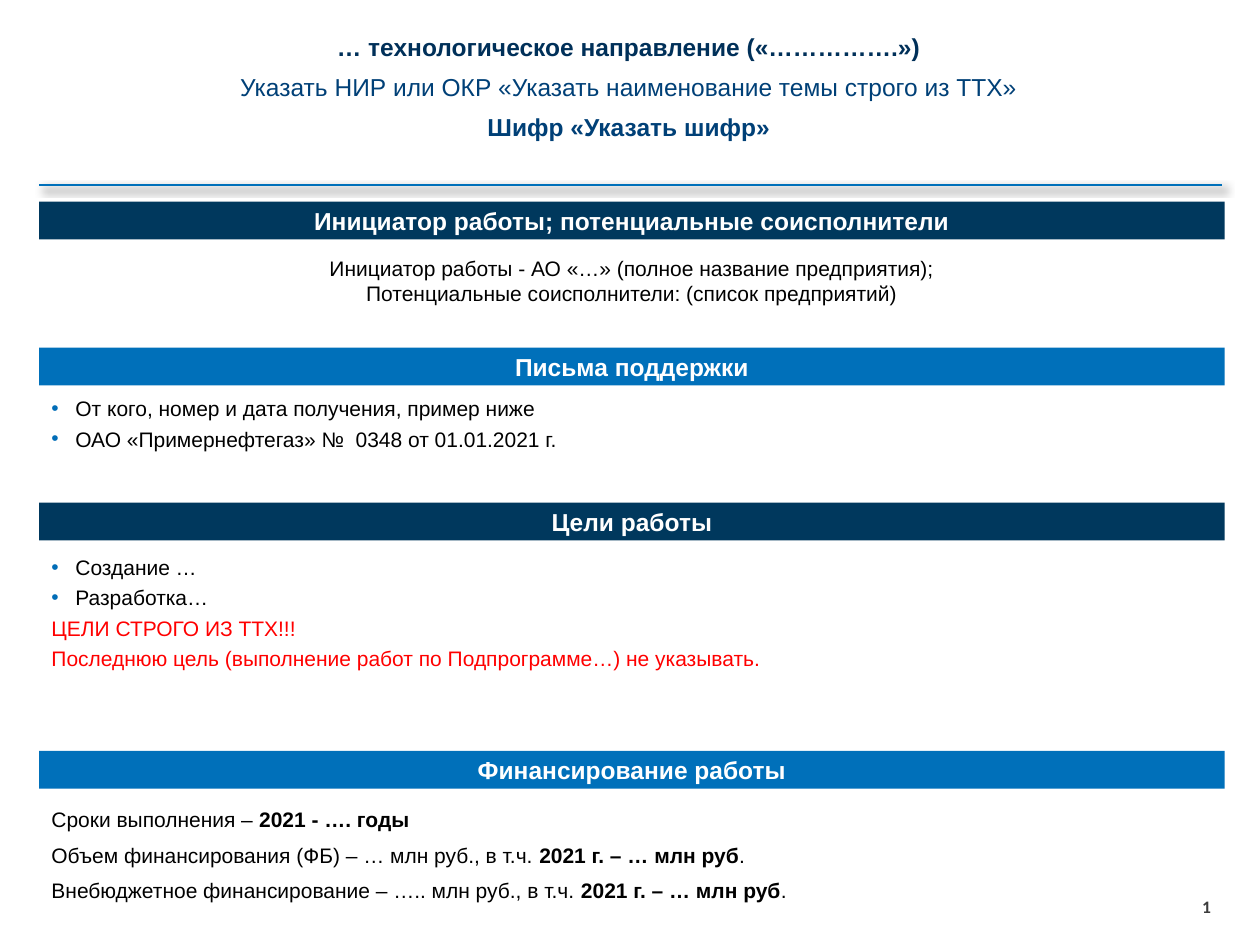
from lxml.etree import SubElement
from pptx import Presentation
from pptx.dml.color import RGBColor
from pptx.enum.shapes import MSO_CONNECTOR as Connector, MSO_SHAPE as Shape
from pptx.enum.text import MSO_ANCHOR as Anchor, MSO_AUTO_SIZE as AutoSize, PP_ALIGN as Align
from pptx.oxml.ns import qn
from pptx.util import Inches, Pt


class Theme:
    font, number_font = "Arial", "Calibri"
    navy, blue, bullet = "00385D", "0070BA", "016DB7"
    title, subtitle = "003059", "004077"
    white, black, red, grey = "FFFFFF", "000000", "FF0000", "3C3C3C"
    heading_size, body_size, number_size = 14, 12, 10


deck = Presentation()
deck.slide_width, deck.slide_height = Inches(10), Inches(7.5)
column, row = deck.slide_width / 100, deck.slide_height / 75
left, band_width, band_height = 3.1, 94.1, 3


def place(left, top, width, height):
    return [round(left * column), round(top * row), round(width * column), round(height * row)]


def write(frame, lines, size=Theme.body_size, color=Theme.black, font=Theme.font, bold=False,
          align=Align.LEFT, after=0, anchor=Anchor.TOP, inset=None):
    frame.word_wrap = True
    frame.auto_size = AutoSize.NONE
    frame.vertical_anchor = anchor
    if inset is not None:
        frame.margin_left = frame.margin_top = frame.margin_right = frame.margin_bottom = inset
    for index, line in enumerate(lines):
        para = frame.add_paragraph() if index else frame.paragraphs[0]
        para.alignment = align
        para.space_after = Pt(after)
        style = {"color": color, "bold": bold, "bullet": False} | line
        if style["bullet"]:
            props = para._p.get_or_add_pPr()
            indent = Inches(0.19)
            props.set("marL", str(indent))
            props.set("indent", str(-indent))
            SubElement(SubElement(props, qn("a:buClr")), qn("a:srgbClr"), val=Theme.bullet)
            SubElement(props, qn("a:buFont"), typeface=Theme.font)
            SubElement(props, qn("a:buChar"), char="•")
        for part, text in enumerate(line["spans"]):
            span = para.add_run()
            span.text = text
            span.font.name = font
            span.font.size = Pt(size)
            span.font.bold = style["bold"] or part % 2 == 1
            span.font.color.rgb = RGBColor.from_string(style["color"])


page = deck.slides.add_slide(deck.slide_layouts[5])
title = page.shapes.title
title.left, title.top, title.width, title.height = place(left, 2, 93.6, 2.9)
write(title.text_frame, [{"spans": ["… технологическое направление («…………….»)"]}],
      size=Theme.heading_size, color=Theme.title, bold=True,
      align=Align.CENTER, anchor=Anchor.BOTTOM, inset=0)

subtitle = page.shapes.add_textbox(*place(3, 5.2, 93.8, 6.6))
write(subtitle.text_frame, [
    {"spans": ["Указать НИР или ОКР «Указать наименование темы строго из ТТХ»"]},
    {"spans": ["Шифр «Указать шифр»"], "bold": True},
], size=Theme.heading_size, color=Theme.subtitle, align=Align.CENTER, after=6)

start_x, rule_y, rule_width, _ = place(left, 14.7, 93.9, 0)
rule = page.shapes.add_connector(Connector.STRAIGHT, start_x, rule_y, start_x + rule_width, rule_y)
rule.line.color.rgb = RGBColor.from_string(Theme.blue)
rule.line.width = Pt(1.5)
effects = SubElement(rule._element.spPr, qn("a:effectLst"))
shadow = SubElement(effects, qn("a:outerShdw"), blurRad=str(Pt(4)), dist=str(Pt(3)),
                    dir="2700000", algn="tl", rotWithShape="0")
shadow_color = SubElement(shadow, qn("a:srgbClr"), val=Theme.black)
SubElement(shadow_color, qn("a:alpha"), val="40000")

sections = [
    (16, "Инициатор работы; потенциальные соисполнители", 19.8, 5,
     {"align": Align.CENTER}, [
         {"spans": ["Инициатор работы - АО «…» (полное название предприятия);"]},
         {"spans": ["Потенциальные соисполнители: (список предприятий)"]},
     ]),
    (27.6, "Письма поддержки", 30.9, 5.5,
     {"align": Align.JUSTIFY, "after": 3}, [
         {"spans": ["От кого, номер и дата получения, пример ниже"], "bullet": True},
         {"spans": ["ОАО «Примернефтегаз» №  0348 от 01.01.2021 г."], "bullet": True},
     ]),
    (39.9, "Цели работы", 43.5, 10.4,
     {"align": Align.JUSTIFY, "after": 3}, [
         {"spans": ["Создание …"], "bullet": True},
         {"spans": ["Разработка…"], "bullet": True},
         {"spans": ["ЦЕЛИ СТРОГО ИЗ ТТХ!!!"], "color": Theme.red},
         {"spans": ["Последнюю цель (выполнение работ по Подпрограмме…) не указывать."],
          "color": Theme.red},
     ]),
    (59.6, "Финансирование работы", 63.5, 8.8,
     {"after": 6}, [
         {"spans": ["Сроки выполнения – ", "2021 - …. годы"]},
         {"spans": ["Объем финансирования (ФБ) – … млн руб., в т.ч. ",
                    "2021 г. – … млн руб", "."]},
         {"spans": ["Внебюджетное финансирование – ….. млн руб., в т.ч. ",
                    "2021 г. – … млн руб", "."]},
     ]),
]
for index, (band_top, heading, body_top, body_height, layout, lines) in enumerate(sections):
    band = page.shapes.add_shape(Shape.RECTANGLE, *place(left, band_top, band_width, band_height))
    band.shadow.inherit = False
    band.fill.solid()
    band.fill.fore_color.rgb = RGBColor.from_string((Theme.navy, Theme.blue)[index % 2])
    band.line.fill.background()
    write(band.text_frame, [{"spans": [heading]}], size=Theme.heading_size, color=Theme.white,
          bold=True, align=Align.CENTER, anchor=Anchor.MIDDLE)
    body = page.shapes.add_textbox(*place(left, body_top, band_width, body_height))
    write(body.text_frame, lines, **layout)

number = page.shapes.add_textbox(*place(95.4, 71.1, 2.4, 1.8))
write(number.text_frame, [{"spans": ["1"]}], size=Theme.number_size, color=Theme.grey,
      font=Theme.number_font, bold=True, inset=0)

deck.save("out.pptx")
